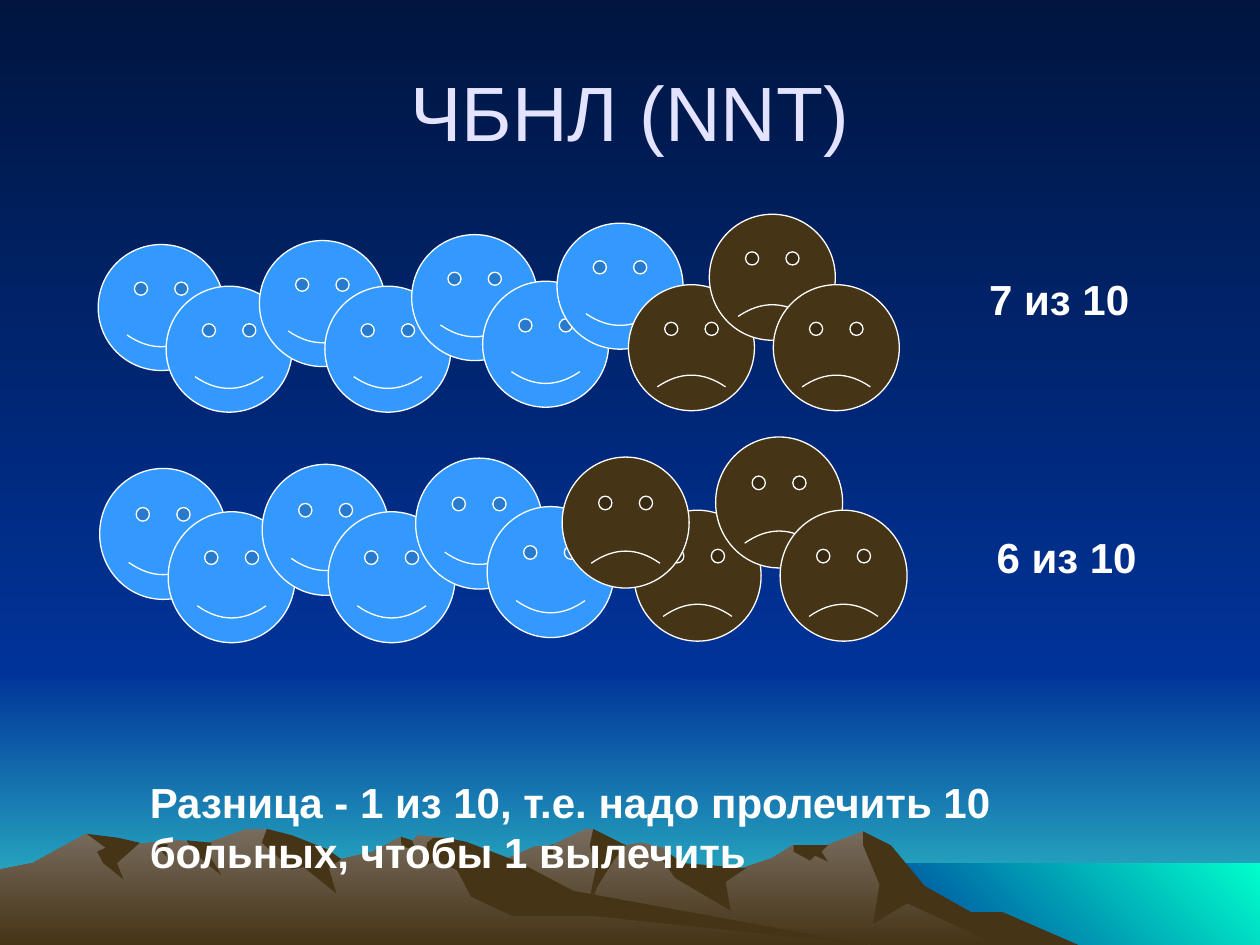
"""Build a slide that explains the number needed to treat with two rows of faces."""
from pptx import Presentation
from pptx import util as u
from pptx.dml.color import RGBColor
from pptx.enum import shapes, text

AZURE = RGBColor(0x33, 0x99, 0xFF)
BROWN = RGBColor(0x46, 0x34, 0x16)
WHITE = RGBColor(0xFF, 0xFF, 0xFF)
LILAC = RGBColor(0xE3, 0xE3, 0xFF)
NIGHT = RGBColor(0x00, 0x15, 0x40)
NAVY = RGBColor(0x00, 0x33, 0x99)
TEAL = RGBColor(0x33, 0xCC, 0xCC)
MINT = RGBColor(0x00, 0xFF, 0xCC)
STONE = RGBColor(0x78, 0x6C, 0x5E)

WIDTH, HEIGHT = 25.4, 19.05
HORIZON, SHORE = 13.54, 17.4
DOWN, UP_RIGHT = 270, 45
STEPS_PER_CM = 100
FACE = 2.54
SMILE = 0.0465

RIGHT_SKYLINE = [
    (6.55, HEIGHT), (8.31, 18.01), (9.02, 17.73), (10.13, 17.35),
    (10.77, 17.07), (11.13, 17.04), (11.81, 16.71), (11.96, 16.71),
    (12.34, 17.09), (12.93, 16.99), (13.36, 17.09), (13.61, 17.53),
    (14.38, 17.7), (15.57, 17.3), (15.98, 17.04), (16.66, 17.04),
    (17.4, 16.76), (17.83, 17.04), (18.36, 17.73), (19.41, 18.36),
    (20.85, HEIGHT)]
LEFT_SKYLINE = [
    (0, HEIGHT), (0, 17.53), (0.66, 17.4), (1.73, 16.81), (2.39, 17.04),
    (3.63, 16.94), (4.06, 17.04), (4.98, 16.71), (5.38, 16.71),
    (5.66, 16.84), (5.99, 17.3), (6.6, 17.17), (6.88, 17.32), (7.52, 17.17),
    (8.08, 16.87), (8.31, 16.97), (8.41, 16.84), (8.99, 16.89),
    (10.97, 18.08), (17.53, HEIGHT)]
RIGHT_SHADOWS = {
    "cliff": [(17.4, 16.76), (17.4, 17.04), (17.73, 17.83), (17.6, 18.62),
              (18.29, 18.21), (20.12, HEIGHT), (21.74, HEIGHT),
              (20.22, 18.39), (19.58, 18.39), (18.64, 17.86), (17.96, 17.04)],
    "peak": [(11.96, 16.71), (11.89, 17.04), (12.01, 17.53), (11.81, 18.47),
             (12.04, 17.88), (12.37, 17.35), (12.62, 17.04)],
    "saddle": [(13.44, 17.17), (13.36, 17.35), (13.61, 17.7), (14.73, 18.36),
               (14.63, 17.78), (15.04, 17.5), (13.77, 17.4)],
    "notch": [(16, 17.04), (16, 17.17), (16.33, 17.35), (16.43, 17.25),
              (16.69, 17.37), (16.56, 17.17), (16.69, 17.04)],
    "crack": [(10.97, 17.09), (11.15, 17.02), (11.15, 17.25), (11.02, 17.37)]}
LEFT_SHADOWS = {
    "peak": [(5.38, 16.71), (5.28, 16.99), (5.89, 17.53), (6.12, 17.48),
             (6.78, 18.01), (6.63, 17.5), (6.88, 17.32), (6.6, 17.12),
             (5.89, 16.84)],
    "long slope": [(8.99, 16.89), (8.74, 16.89), (8.61, 16.99), (8.56, 17.45),
                   (8.84, 17.35), (9.22, 17.55), (9.5, 18.08), (10.34, 18.47),
                   (11.99, 18.47), (17.53, HEIGHT), (11.56, 17.96),
                   (10.44, 17.37), (9.4, 16.97)],
    "notch": [(8.08, 16.87), (8.31, 16.94), (8.38, 17.12), (8.1, 17.07)],
    "gully": [(3.76, 16.94), (4.27, 16.99), (4.19, 17.2), (4.47, 17.65),
              (3.91, 17.2)],
    "crack": [(3.12, 16.99), (3.38, 17.02), (3.35, 17.27)],
    "west peak": [(1.75, 16.81), (2.39, 16.89), (2.82, 16.99), (2.36, 17.4),
                  (2.49, 17.73), (2.08, 17.4), (1.96, 17.17), (2.13, 17.09)]}

FACE_OFFSETS = [
    (0, 0.61), (1.37, 1.45), (3.25, 0.53), (4.57, 1.45), (6.32, 0.41),
    (7.75, 1.35), (9.25, 0.18), (10.69, 1.42), (12.32, 0), (13.61, 1.42)]


def paint(sp, colors, angle=DOWN):
    """Fill a shape with one colour or a two-colour gradient."""
    sp.shadow.inherit = False
    sp.line.fill.background()
    if len(colors) == 1:
        sp.fill.solid()
        sp.fill.fore_color.rgb = colors[0]
        return
    sp.fill.gradient()
    sp.fill.gradient_angle = angle
    for stop, color in zip(sp.fill.gradient_stops, colors):
        stop.color.rgb = color


def add_band(s, left, top, bottom, colors, angle=DOWN):
    """Add a gradient band that reaches the right edge of the slide."""
    sp = s.shapes.add_shape(shapes.MSO_SHAPE.RECTANGLE, u.Cm(left), u.Cm(top),
                            u.Cm(WIDTH - left), u.Cm(bottom - top))
    paint(sp, colors, angle)


def add_outline(s, points, *colors):
    """Add a closed outline from points in centimetres."""
    steps = [(x * STEPS_PER_CM, y * STEPS_PER_CM) for x, y in points]
    builder = s.shapes.build_freeform(*steps[0], scale=u.Cm(1) / STEPS_PER_CM)
    builder.add_line_segments(steps[1:], close=True)
    paint(builder.convert_to_shape(), colors)


def add_mountain(s, skyline, shadows):
    """Add a mountain and the shadows on its side."""
    add_outline(s, skyline, STONE, BROWN)
    for points in shadows.values():
        add_outline(s, points, BROWN)


def add_face(s, x, y, w, h, cured):
    """Add a smiling face for a cured patient, else a frowning one."""
    sp = s.shapes.add_shape(shapes.MSO_SHAPE.SMILEY_FACE,
                            u.Cm(x), u.Cm(y), u.Cm(w), u.Cm(h))
    sp.adjustments[0] = SMILE if cured else -SMILE
    paint(sp, [AZURE if cured else BROWN])
    sp.line.color.rgb = WHITE
    sp.line.width = u.Pt(0.75)


def add_patients(s, left, top, w, h, cured, front=None, drop=0):
    """Add ten faces scaled to the face size, one of them lowered in front."""
    order = sorted(range(len(FACE_OFFSETS)), key=lambda i: i == front)
    for i in order:
        dx, dy = FACE_OFFSETS[i]
        if i == front:
            dy += drop
        add_face(s, left + dx * w / FACE, top + dy * h / FACE, w, h, i < cured)


def add_text(s, x, y, w, h, content, size=24, color=WHITE, bold=True,
             align=text.PP_ALIGN.LEFT, anchor=text.MSO_ANCHOR.TOP, wrap=True):
    """Add a text box with one run."""
    tf = s.shapes.add_textbox(u.Cm(x), u.Cm(y), u.Cm(w), u.Cm(h)).text_frame
    tf.word_wrap = wrap
    tf.vertical_anchor = anchor
    p = tf.paragraphs[0]
    p.alignment = align
    r = p.add_run()
    r.text = content
    r.font.name = "Arial"
    r.font.size = u.Pt(size)
    r.font.bold = bold
    r.font.color.rgb = color


def add_landscape(s):
    """Add the sky, the water and the mountains."""
    add_band(s, 0, HORIZON, HEIGHT, [NAVY, TEAL])
    add_band(s, 0, 0, HORIZON, [NIGHT, NAVY])
    add_band(s, 17.35, SHORE, HEIGHT, [NAVY, MINT], UP_RIGHT)
    add_mountain(s, RIGHT_SKYLINE, RIGHT_SHADOWS)
    add_mountain(s, LEFT_SKYLINE, LEFT_SHADOWS)


def main():
    """Build and save the slide."""
    prs = Presentation()
    prs.slide_width, prs.slide_height = u.Cm(WIDTH), u.Cm(HEIGHT)
    s = prs.slides.add_slide(prs.slide_layouts[6])
    s.background.fill.solid()
    s.background.fill.fore_color.rgb = AZURE
    add_landscape(s)
    add_text(s, 1.27, 0.64, 22.86, 3.18, "ЧБНЛ (NNT)", 44, LILAC, False,
             text.PP_ALIGN.CENTER, text.MSO_ANCHOR.MIDDLE)
    add_patients(s, 1.98, 4.32, FACE, FACE, cured=7)
    add_patients(s, 2.01, 8.81, 2.56, 2.64, cured=6, front=6, drop=0.21)
    add_text(s, 19.69, 5.38, 3.33, 1.27, "7 из 10", wrap=False)
    add_text(s, 19.84, 10.59, 3.33, 1.27, "6 из 10", wrap=False)
    add_text(s, 2.77, 15.52, 19.89, 2.29,
             "Разница - 1 из 10, т.е. надо пролечить 10 больных, чтобы 1 вылечить")
    prs.save("out.pptx")


if __name__ == "__main__":
    main()
